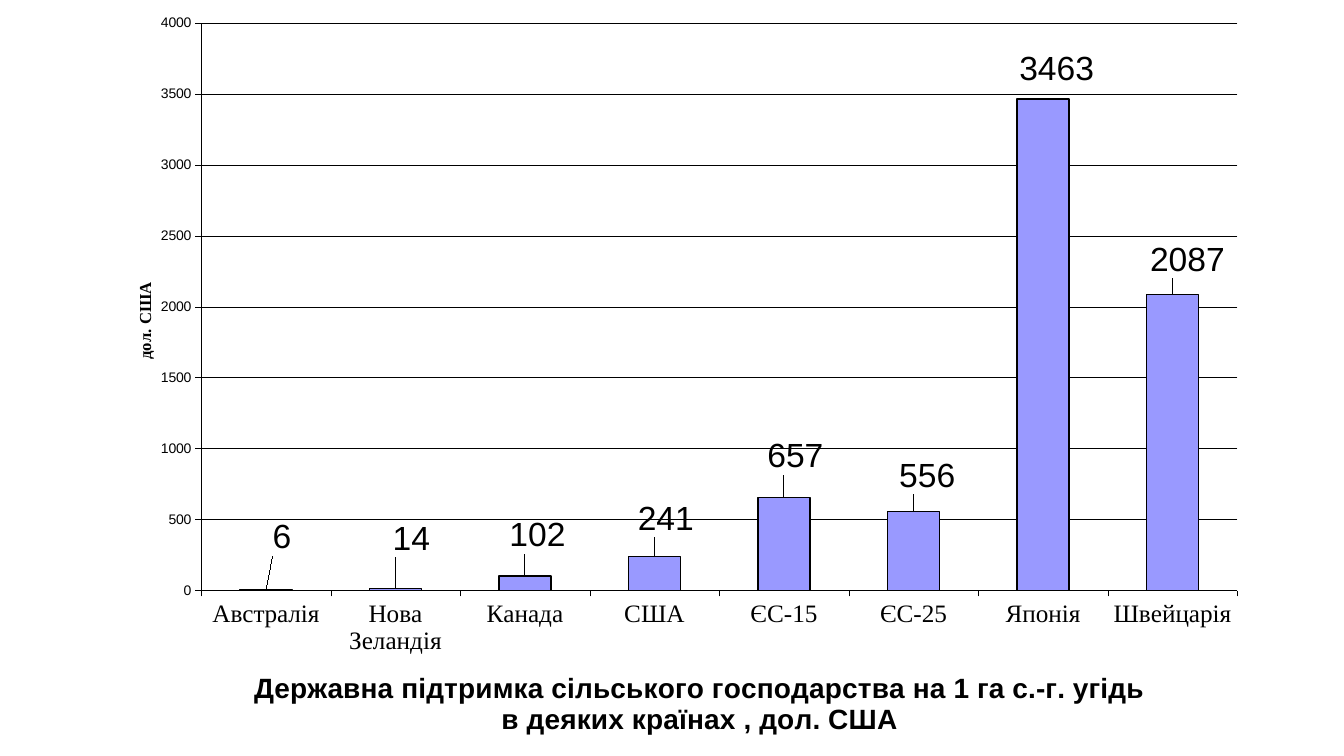
from dataclasses import dataclass

from lxml import etree
from pptx import Presentation
from pptx import util as u
from pptx.chart import data
from pptx.dml.color import RGBColor
from pptx.enum import chart as ch
from pptx.oxml.ns import qn


@dataclass(frozen=True)
class Theme:
    """Colours, fonts and type sizes of the slide."""
    ink: str = "000000"
    bar: str = "9999FF"
    sans: str = "Arial"
    serif: str = "Times New Roman"
    tick: int = 10
    unit: int = 12
    name: int = 18
    head: int = 20
    mark: int = 24
    thin: float = 0.25
    edge: float = 1


THEME = Theme()
HEAD = "Державна підтримка сільського господарства на 1 га с.-г. угідь в деяких країнах , дол. США"
UNIT = "дол. США"
AID = {
    "Австралія": 6, "Нова Зеландія": 14, "Канада": 102, "США": 241,
    "ЄС-15": 657, "ЄС-25": 556, "Японія": 3463, "Швейцарія": 2087,
}
SHIFT = [(1.4, -4.1), (1.4, -3.7), (1.1, -2.5), (1, -2),
         (1, -2.5), (1.2, -1.8), (1.2, -1), (1.3, -1.6)]


def style(font, face, size, bold=False):
    """Set face, size, weight and ink of a font."""
    font.name, font.size, font.bold = face, u.Pt(size), bold
    font.color.rgb = RGBColor.from_string(THEME.ink)


def stroke(line, width):
    """Draw a line in ink."""
    line.color.rgb = RGBColor.from_string(THEME.ink)
    line.width = u.Pt(width)


def place(node, modes, **share):
    """Give a chart part a manual layout in percent of the chart."""
    old = node.find(qn("c:layout"))
    if old is not None:
        node.remove(old)
    lay = etree.Element(qn("c:layout"))
    man = etree.SubElement(lay, qn("c:manualLayout"))
    for tag, val in modes.items():
        etree.SubElement(man, qn("c:" + tag), val=val)
    for tag, val in share.items():
        etree.SubElement(man, qn("c:" + tag), val=str(round(val / 100, 4)))
    lead = [kid for kid in node if kid.tag in (qn("c:idx"), qn("c:tx"))]
    node.insert(len(lead), lay)


def label(title, words, face, size, x, y):
    """Write a bold title at its place in the chart."""
    title.text_frame.text = words
    style(title.text_frame.paragraphs[0].runs[0].font, face, size, True)
    place(title._element, {"xMode": "edge", "yMode": "edge"}, x=x, y=y)


def axes(chart):
    """Format both axes and the grid."""
    cat, val = chart.category_axis, chart.value_axis
    for axis, face, size in ((cat, THEME.serif, THEME.name), (val, THEME.sans, THEME.tick)):
        style(axis.tick_labels.font, face, size)
        stroke(axis.format.line, THEME.thin)
        axis.major_tick_mark = ch.XL_TICK_MARK.OUTSIDE
        axis.minor_tick_mark = ch.XL_TICK_MARK.NONE
    cat.tick_label_position = ch.XL_TICK_LABEL_POSITION.LOW
    val.minimum_scale, val.maximum_scale, val.major_unit = 0, 4000, 500
    val.has_major_gridlines = True
    stroke(val.major_gridlines.format.line, THEME.thin)
    label(val.axis_title, UNIT, THEME.serif, THEME.unit, 2.1, 36.4)


def bars(plot):
    """Format the bars and shift their value labels."""
    plot.gap_width, plot.vary_by_categories = 150, False
    row = plot.series[0]
    row.format.fill.solid()
    row.format.fill.fore_color.rgb = RGBColor.from_string(THEME.bar)
    stroke(row.format.line, THEME.edge)
    row.data_labels.show_value = True
    style(row.data_labels.font, THEME.sans, THEME.mark)
    for i, (x, y) in enumerate(SHIFT):
        tag = row.points[i].data_label
        style(tag.font, THEME.sans, THEME.mark)
        tag.position = ch.XL_LABEL_POSITION.OUTSIDE_END
        place(tag._get_or_add_dLbl(), {}, x=x, y=y)


def graph(slide, box):
    """Place the column chart in its box."""
    info = data.CategoryChartData()
    info.categories = list(AID)
    info.add_series(UNIT, list(AID.values()))
    kind = ch.XL_CHART_TYPE.COLUMN_CLUSTERED
    chart = slide.shapes.add_chart(kind, *map(int, box), info).chart
    style(chart.font, THEME.sans, THEME.tick)
    chart.has_legend = False
    label(chart.chart_title, HEAD, THEME.sans, THEME.head, 12.4, 89.6)
    axes(chart)
    bars(chart.plots[0])
    area = chart._chartSpace.chart.plotArea
    modes = {"layoutTarget": "inner", "xMode": "edge", "yMode": "edge"}
    place(area, modes, x=8.2, y=1, w=90.7, h=78.3)


def main():
    """Build and save the deck."""
    deck = Presentation()
    deck.slide_width, deck.slide_height = u.Inches(13.33), u.Inches(7.5)
    wide, high = deck.slide_width, deck.slide_height
    slide = deck.slides.add_slide(deck.slide_layouts[6])
    graph(slide, (wide * 0.08, high * 0.02, wide * 0.85, high * 0.965))
    deck.save("out.pptx")


if __name__ == "__main__":
    main()
